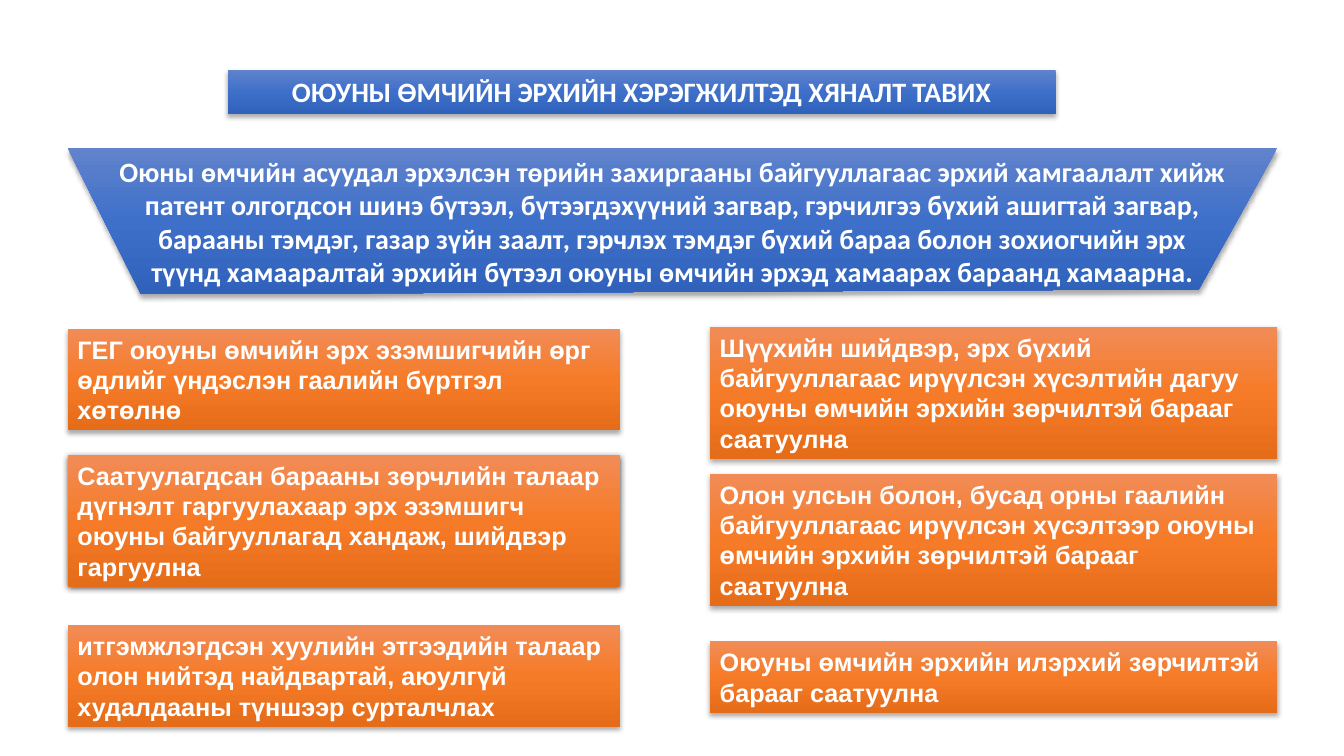
from copy import deepcopy

from lxml import etree
from pptx import Presentation
from pptx.dml.color import RGBColor
from pptx.enum.shapes import MSO_SHAPE as Shape
from pptx.enum.text import MSO_ANCHOR as Anchor, MSO_AUTO_SIZE as AutoSize, PP_ALIGN as Align
from pptx.oxml.ns import qn
from pptx.util import Inches, Pt

BLUES = ["6183CB", "3E70CA", "3062BB"]
ORANGES = ["F18C57", "F67B28", "E56C19"]
SOFT_SHADOW = (32, 3.5, 2.2)
STRONG_SHADOW = (63, 4.5, 1.5)

TITLE = "ОЮУНЫ ӨМЧИЙН ЭРХИЙН ХЭРЭГЖИЛТЭД ХЯНАЛТ ТАВИХ"
DEFINITION = [
    "Оюны өмчийн асуудал эрхэлсэн төрийн захиргааны байгууллагаас эрхий хамгаалалт хийж "
    "патент олгогдсон шинэ бүтээл, бүтээгдэхүүний загвар, гэрчилгээ бүхий ашигтай загвар,",
    "барааны тэмдэг, газар зүйн заалт, гэрчлэх тэмдэг бүхий бараа болон зохиогчийн эрх",
    "түүнд хамааралтай эрхийн бүтээл оюуны өмчийн эрхэд хамаарах бараанд хамаарна.",
]
OWNER_MEASURES = [
    (3.26, 1.01, "ГЕГ оюуны өмчийн эрх эзэмшигчийн өрг өдлийг үндэслэн гаалийн "
     "бүртгэл хөтөлнө", SOFT_SHADOW),
    (4.51, 1.31, "Саатуулагдсан барааны зөрчлийн талаар дүгнэлт гаргуулахаар эрх эзэмшигч "
     "оюуны байгууллагад хандаж, шийдвэр гаргуулна", STRONG_SHADOW),
    (6.2, 1.01, "итгэмжлэгдсэн хуулийн этгээдийн талаар олон нийтэд найдвартай, аюулгүй "
     "худалдааны түншээр сурталчлах", SOFT_SHADOW),
]
DETENTION_MEASURES = [
    (3.24, 1.31, "Шүүхийн шийдвэр, эрх бүхий байгууллагаас ирүүлсэн хүсэлтийн дагуу оюуны "
     "өмчийн эрхийн зөрчилтэй барааг саатуулна", SOFT_SHADOW),
    (4.7, 1.31, "Олон улсын болон, бусад орны гаалийн байгууллагаас ирүүлсэн хүсэлтээр оюуны "
     "өмчийн эрхийн зөрчилтэй барааг саатуулна", SOFT_SHADOW),
    (6.36, 0.71, "Оюуны өмчийн эрхийн илэрхий зөрчилтэй барааг саатуулна", SOFT_SHADOW),
]


def rgb(code):
    return RGBColor.from_string(code)


def paint(shape, colors, shadow):
    shape.fill.gradient()
    shape.fill.gradient_angle = 270
    properties = shape.element.spPr
    stops = properties.find(qn("a:gradFill")).find(qn("a:gsLst"))
    stops.insert(1, deepcopy(stops[0]))
    for stop, color, position in zip(shape.fill.gradient_stops, colors, (0, 0.5, 1)):
        stop.color.rgb = rgb(color)
        stop.position = position
    shape.line.fill.background()

    shape.shadow.inherit = False
    opacity, blur, distance = shadow
    outer = etree.SubElement(
        properties.find(qn("a:effectLst")), qn("a:outerShdw"),
        blurRad=str(Pt(blur)), dist=str(Pt(distance)), dir="5400000", rotWithShape="0")
    black = etree.SubElement(outer, qn("a:srgbClr"), val="000000")
    etree.SubElement(black, qn("a:alpha"), val=str(opacity * 1000))


def write(shape, lines, font, size, align):
    frame = shape.text_frame
    frame.word_wrap = True
    frame.auto_size = AutoSize.SHAPE_TO_FIT_TEXT
    frame.vertical_anchor = Anchor.MIDDLE
    frame.text = "\n".join(lines)
    for paragraph in frame.paragraphs:
        paragraph.alignment = align
        paragraph.font.name = font
        paragraph.font.size = Pt(size)
        paragraph.font.bold = True
        paragraph.font.color.rgb = rgb("FFFFFF")


def add_title(slide, left, top, width, height):
    banner = slide.shapes.add_shape(
        Shape.RECTANGLE, Inches(left), Inches(top), Inches(width), Inches(height))
    paint(banner, BLUES, SOFT_SHADOW)
    write(banner, [TITLE], "Calibri", 20, Align.CENTER)


def add_definition(slide, left, top, width, height):
    right, bottom = left + width, top + height
    corners = [(right, top), (right - 0.78, bottom - 0.05), (left + 0.73, bottom)]
    outline = slide.shapes.build_freeform(Inches(left), Inches(top))
    outline.add_line_segments([(Inches(x), Inches(y)) for x, y in corners], close=True)
    funnel = outline.convert_to_shape()
    paint(funnel, BLUES, SOFT_SHADOW)
    write(funnel, DEFINITION, "Calibri", 20, Align.CENTER)


def add_measures(slide, left, width, measures):
    for top, height, text, shadow in measures:
        card = slide.shapes.add_shape(
            Shape.RECTANGLE, Inches(left), Inches(top), Inches(width), Inches(height))
        paint(card, ORANGES, shadow)
        write(card, [text], "Arial", 18, Align.LEFT)


def main():
    deck = Presentation()
    deck.slide_width, deck.slide_height = Inches(13.33), Inches(7.5)
    slide = deck.slides.add_slide(deck.slide_layouts[6])
    add_title(slide, 2.26, 0.69, 8.21, 0.44)
    add_definition(slide, 0.67, 1.47, 12, 1.45)
    add_measures(slide, 0.67, 5.48, OWNER_MEASURES)
    add_measures(slide, 7.04, 5.63, DETENTION_MEASURES)
    deck.save("out.pptx")


if __name__ == "__main__":
    main()
